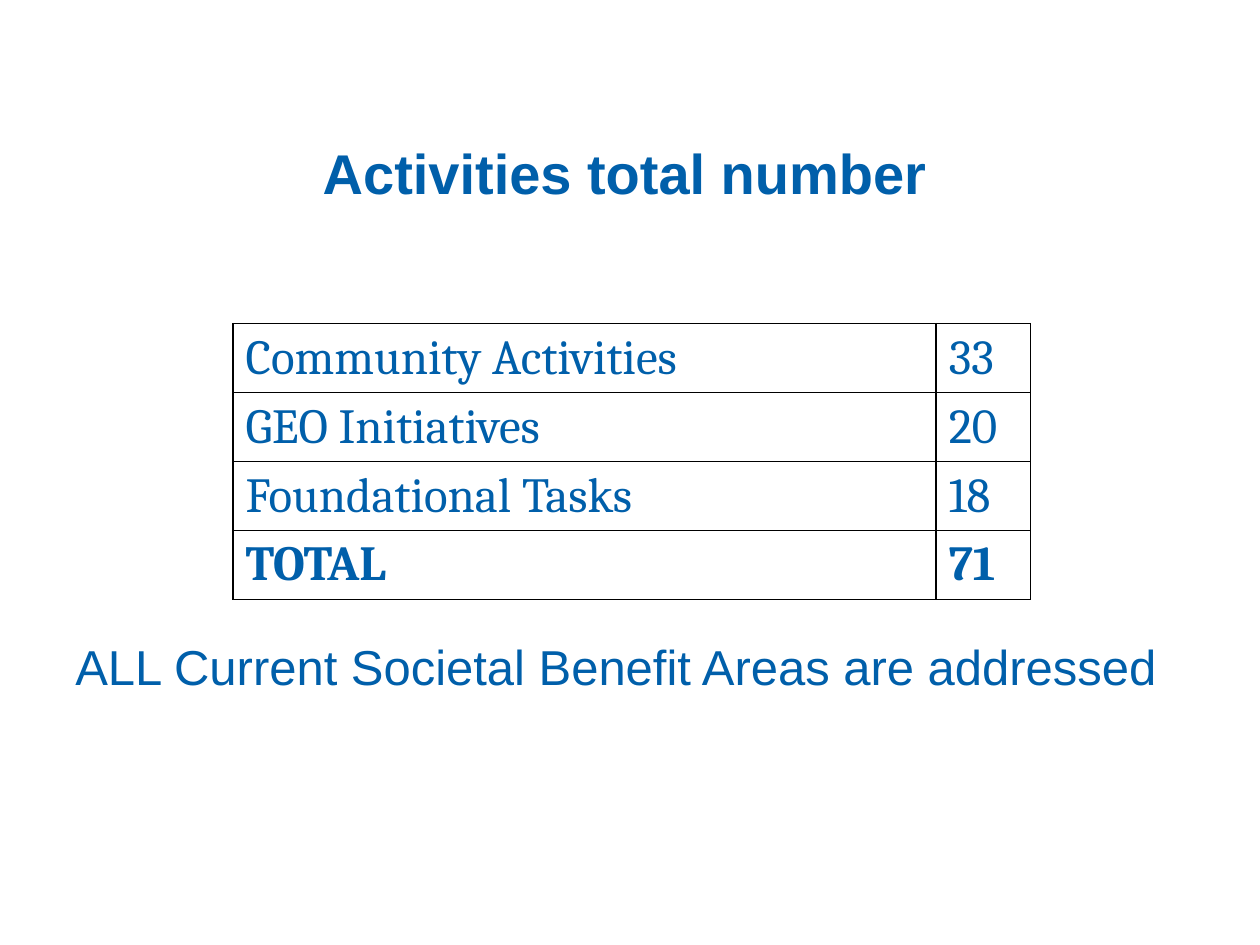
from dataclasses import dataclass

import pptx
import pptx.dml.color
import pptx.enum.text
import pptx.oxml
import pptx.oxml.ns
import pptx.util

Pt = pptx.util.Pt
ALIGN = pptx.enum.text.PP_ALIGN
ANCHOR = pptx.enum.text.MSO_ANCHOR
COLORS = {"text": "005FAA", "border": "000000"}


@dataclass
class Activity:
    name: str
    count: str
    bold: bool = False


ACTIVITIES = [
    Activity("Community Activities", "33"),
    Activity("GEO Initiatives", "20"),
    Activity("Foundational Tasks", "18"),
    Activity("TOTAL", "71", bold=True),
]
COLUMN_WIDTHS = (401.8, 54)
ROW_HEIGHT = 39.4


def add_text(tf, text: str, size: float, font: str, bold: bool = False,
             align=ALIGN.LEFT) -> None:
    p = tf.paragraphs[0]
    p.alignment = align
    r = p.add_run()
    r.text = text
    r.font.size = Pt(size)
    r.font.name = font
    r.font.bold = bold
    r.font.color.rgb = pptx.dml.color.RGBColor.from_string(COLORS["text"])


def set_borders(cell, color: str, width: float) -> None:
    """Insert the cell's side lines ahead of its fill."""
    tc_pr = cell._tc.get_or_add_tcPr()
    for i, side in enumerate(("lnL", "lnR", "lnT", "lnB")):
        tc_pr.insert(i, pptx.oxml.parse_xml(
            f'<a:{side} {pptx.oxml.ns.nsdecls("a")} w="{Pt(width)}">'
            f'<a:solidFill><a:srgbClr val="{color}"/></a:solidFill></a:{side}>'))


def add_activity_table(s, left: float, top: float) -> None:
    table = s.shapes.add_table(
        len(ACTIVITIES), len(COLUMN_WIDTHS), Pt(left), Pt(top),
        Pt(sum(COLUMN_WIDTHS)), Pt(ROW_HEIGHT * len(ACTIVITIES))).table
    table.first_row = table.horz_banding = False
    for column, width in zip(table.columns, COLUMN_WIDTHS):
        column.width = Pt(width)
    for row, activity in zip(table.rows, ACTIVITIES):
        row.height = Pt(ROW_HEIGHT)
        for cell, text in zip(row.cells, (activity.name, activity.count)):
            cell.fill.background()
            set_borders(cell, COLORS["border"], 1)
            add_text(cell.text_frame, text, 28, "Cambria", activity.bold)


def main() -> None:
    prs = pptx.Presentation()
    prs.slide_width, prs.slide_height = Pt(720), Pt(540)
    s = prs.slides.add_slide(prs.slide_layouts[5])

    # Title
    title = s.shapes.title
    title.left, title.top, title.width, title.height = map(Pt, (76.3, 62.6, 561.6, 71.3))
    title.text_frame.vertical_anchor = ANCHOR.MIDDLE
    add_text(title.text_frame, "Activities total number", 32, "Arial", True, ALIGN.CENTER)

    # Activity counts
    add_activity_table(s, 133.2, 185)

    # Closing statement
    sp = s.shapes.add_textbox(Pt(36), Pt(360), Pt(635.8), Pt(41))
    tf = sp.text_frame
    tf.word_wrap = True
    tf.auto_size = pptx.enum.text.MSO_AUTO_SIZE.SHAPE_TO_FIT_TEXT
    add_text(tf, "ALL Current Societal Benefit Areas are addressed", 28, "Arial")

    prs.save("out.pptx")


if __name__ == "__main__":
    main()
